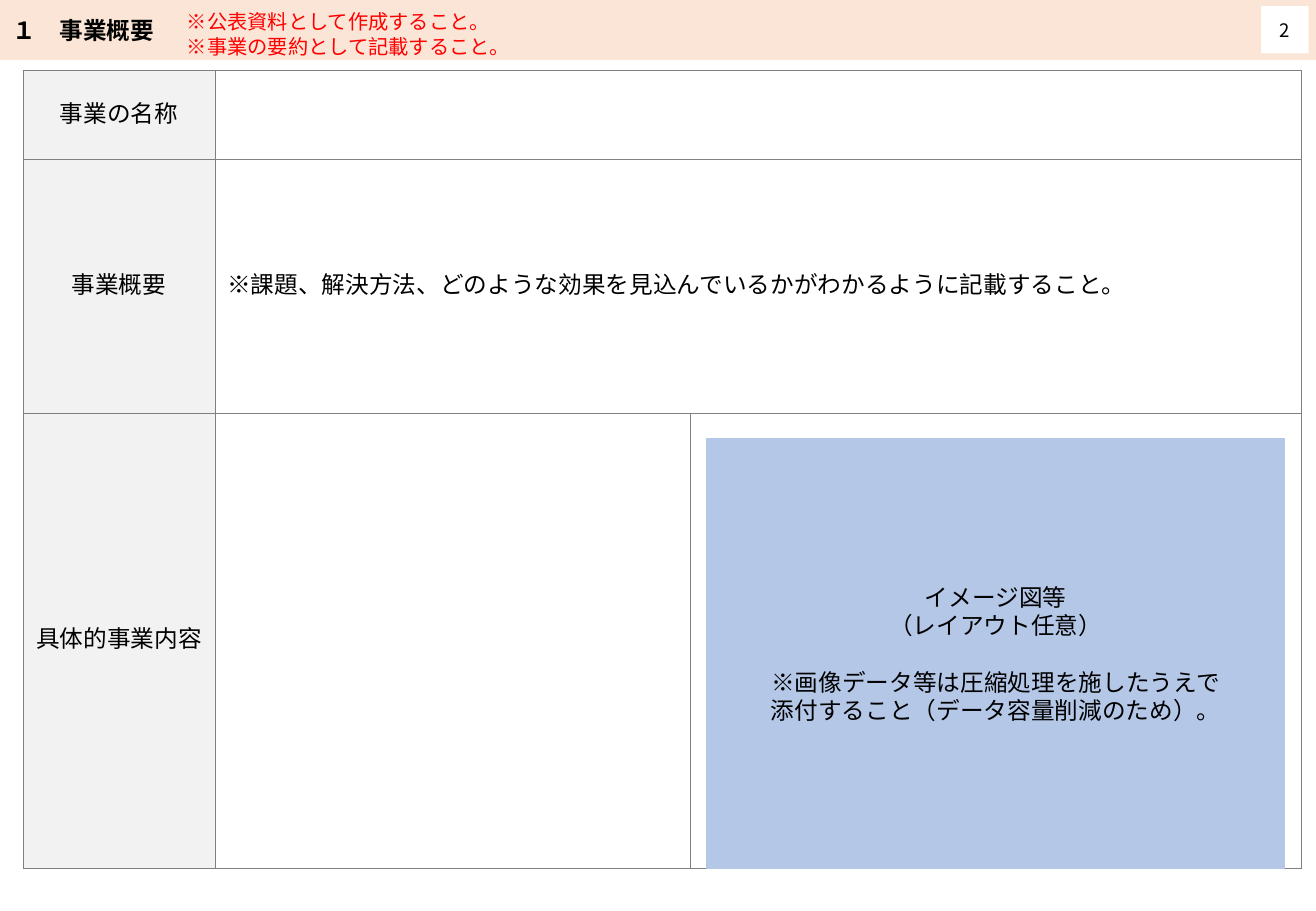
from lxml import etree
from pptx import Presentation, util as u
from pptx.dml.color import RGBColor
from pptx.enum import shapes, text as t
from pptx.oxml.ns import qn

FONT = "Noto Sans CJK JP"
WIDTH, HEIGHT = u.Inches(10.83), u.Inches(7.5)
BAND, LABEL, IMAGE, RULE = "FBE5D6", "F2F2F2", "B4C7E7", "808080"
TITLE = "１　事業概要"
NOTES = ["※公表資料として作成すること。", "※事業の要約として記載すること。"]
IMAGE_GUIDE = ["イメージ図等", "（レイアウト任意）",
               "※画像データ等は圧縮処理を施したうえで",
               "添付すること（データ容量削減のため）。"]
SUMMARY = "※課題、解決方法、どのような効果を見込んでいるかがわかるように記載すること。"
COLUMNS = [14.59, 36.1, 46.45]    # shares of the slide width, in percent
ROWS = [4.13, 5.6, 27.87, 50]     # shares of the slide height, in percent


def rgb(code):
    return RGBColor.from_string(code)


def across(share):
    return round(WIDTH * share / 100)


def down(share):
    return round(HEIGHT * share / 100)


def area(left, top, width, height):
    return across(left), down(top), across(width), down(height)


def write(frame, lines, size=14, color="000000", bold=False,
          align=t.PP_ALIGN.CENTER, anchor=t.MSO_ANCHOR.MIDDLE, gap_before=None):
    """Fill a text frame; gap_before is the line that follows a one-line gap."""
    frame.word_wrap = True
    frame.vertical_anchor = anchor
    for index, line in enumerate(lines):
        paragraph = frame.add_paragraph() if index else frame.paragraphs[0]
        paragraph.alignment = align
        paragraph.line_spacing = u.Pt(size * 1.2)
        paragraph.space_before = u.Pt(size * 1.2 if index == gap_before else 0)
        run = paragraph.add_run()
        run.text = line
        run.font.size, run.font.bold, run.font.name = u.Pt(size), bold, FONT
        run.font.color.rgb = rgb(color)
        etree.SubElement(run.font._element, qn("a:ea"), typeface=FONT)


def paint(shape, fill, line=None):
    shape.fill.solid()
    shape.fill.fore_color.rgb = rgb(fill)
    if line:
        shape.line.color.rgb = rgb(line)
        shape.line.width = u.Pt(1)
    else:
        shape.line.fill.background()


def panel(slide, box, fill, line=None):
    shape = slide.shapes.add_shape(shapes.MSO_SHAPE.RECTANGLE, *area(*box))
    shape.shadow.inherit = False
    paint(shape, fill, line)
    return shape.text_frame


def border(cell, hidden=""):
    """Rule the four sides of a cell, except those in hidden."""
    properties = cell._tc.get_or_add_tcPr()
    for side in "LRTB":
        edge = etree.SubElement(properties, qn("a:ln" + side), w=str(u.Pt(0.5)))
        if side in hidden:
            etree.SubElement(edge, qn("a:noFill"))
        else:
            fill = etree.SubElement(edge, qn("a:solidFill"))
            etree.SubElement(fill, qn("a:srgbClr"), val=RULE)


def header(slide):
    title = slide.shapes.title
    title.left, title.top, title.width, title.height = area(0, 0, 100, 6.53)
    paint(title, BAND, BAND)
    write(title.text_frame, [TITLE], bold=True, align=t.PP_ALIGN.LEFT)


def overview(slide):
    grid = slide.shapes.add_table(
        len(ROWS), len(COLUMNS), *area(1.75, 7.73, sum(COLUMNS), sum(ROWS))).table
    grid.first_row = grid.horz_banding = False
    for column, share in zip(grid.columns, COLUMNS):
        column.width = across(share)
    for row, share in zip(grid.rows, ROWS):
        row.height = down(share)

    # The name label spans two rows; the wide answers span two columns
    grid.cell(0, 0).merge(grid.cell(1, 0))
    for row in range(3):
        grid.cell(row, 1).merge(grid.cell(row, 2))

    contents = {(0, 0): "事業の名称", (2, 0): "事業概要",
                (3, 0): "具体的事業内容", (2, 1): SUMMARY}
    open_sides = {0: "B", 1: "T"}
    for row in range(len(ROWS)):
        for column in range(len(COLUMNS)):
            cell = grid.cell(row, column)
            border(cell, open_sides.get(row, "") if column else "")
            if column:
                cell.fill.background()
            else:
                cell.fill.solid()
                cell.fill.fore_color.rgb = rgb(LABEL)
            if (row, column) in contents:
                write(cell.text_frame, [contents[row, column]],
                      align=t.PP_ALIGN.LEFT if column else t.PP_ALIGN.CENTER)
                cell.vertical_anchor = t.MSO_ANCHOR.MIDDLE
            else:
                # Small type keeps an empty row at its set height
                end = cell.text_frame.paragraphs[0]._p.get_or_add_endParaRPr()
                end.set("sz", "800")


def main():
    deck = Presentation()
    deck.slide_width, deck.slide_height = WIDTH, HEIGHT
    slide = deck.slides.add_slide(deck.slide_layouts.get_by_name("Title Only"))

    header(slide)
    overview(slide)

    # Red instructions beside the title
    notes = slide.shapes.add_textbox(*area(13.3, 0.4, 40.44, 6.67))
    write(notes.text_frame, NOTES, size=12, color="FF0000",
          align=t.PP_ALIGN.LEFT, anchor=t.MSO_ANCHOR.TOP)

    # Image area and page number
    write(panel(slide, (53.74, 48.13, 43.86, 47.2), IMAGE, IMAGE),
          IMAGE_GUIDE, gap_before=2)
    write(panel(slide, (95.84, 0.67, 3.6, 5.2), "FFFFFF"), ["2"], size=11)

    deck.save("out.pptx")


if __name__ == "__main__":
    main()
